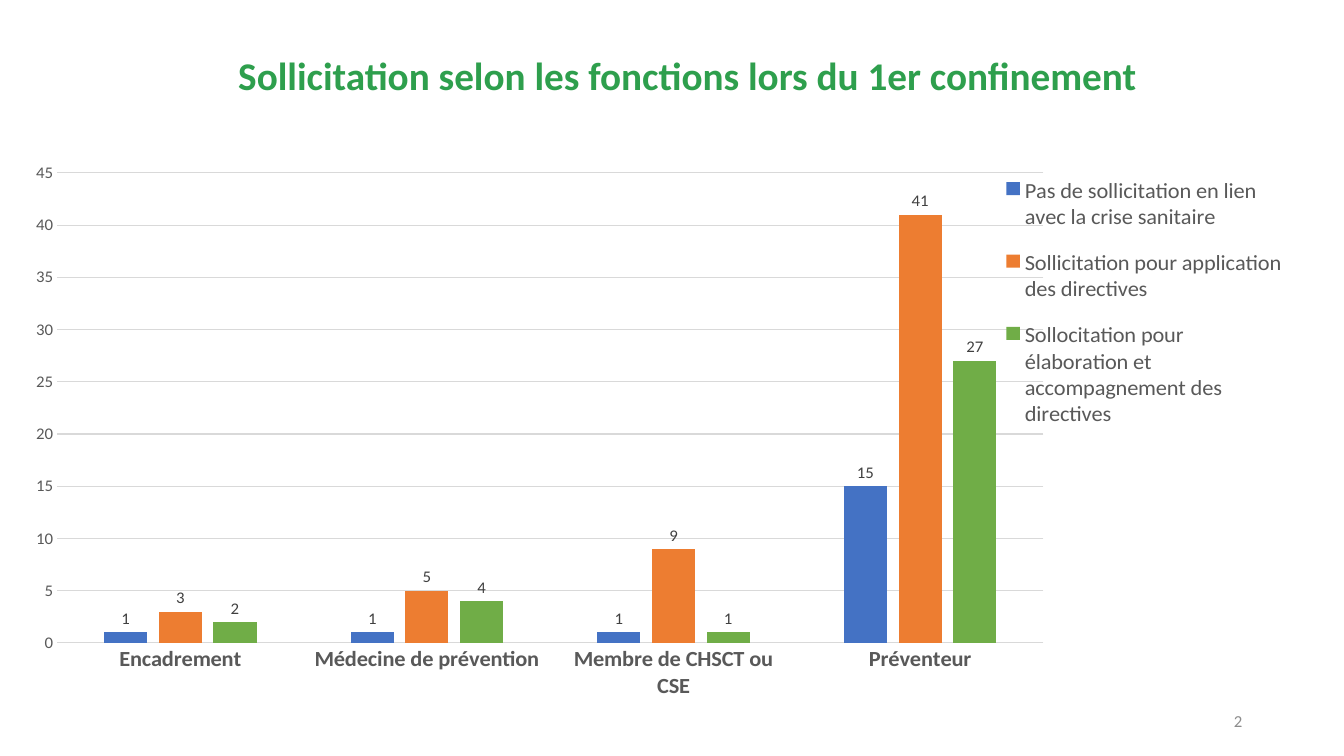
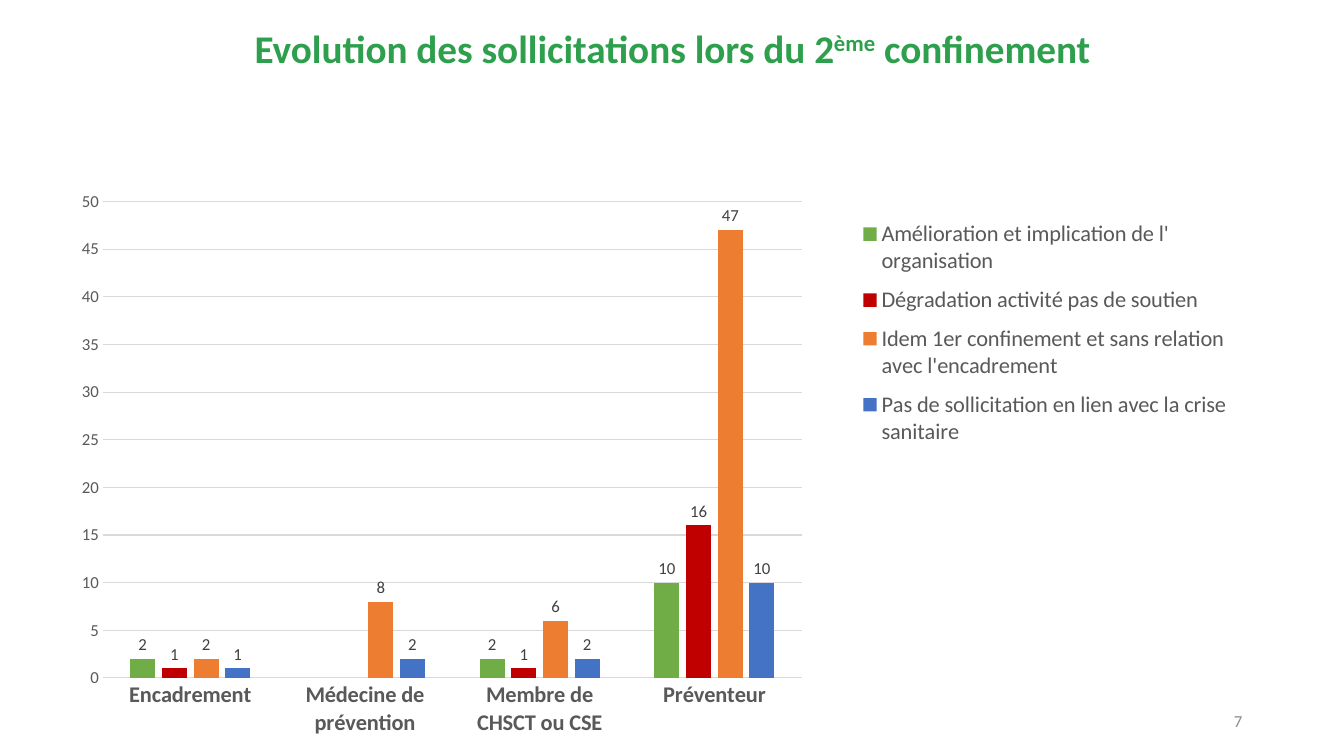
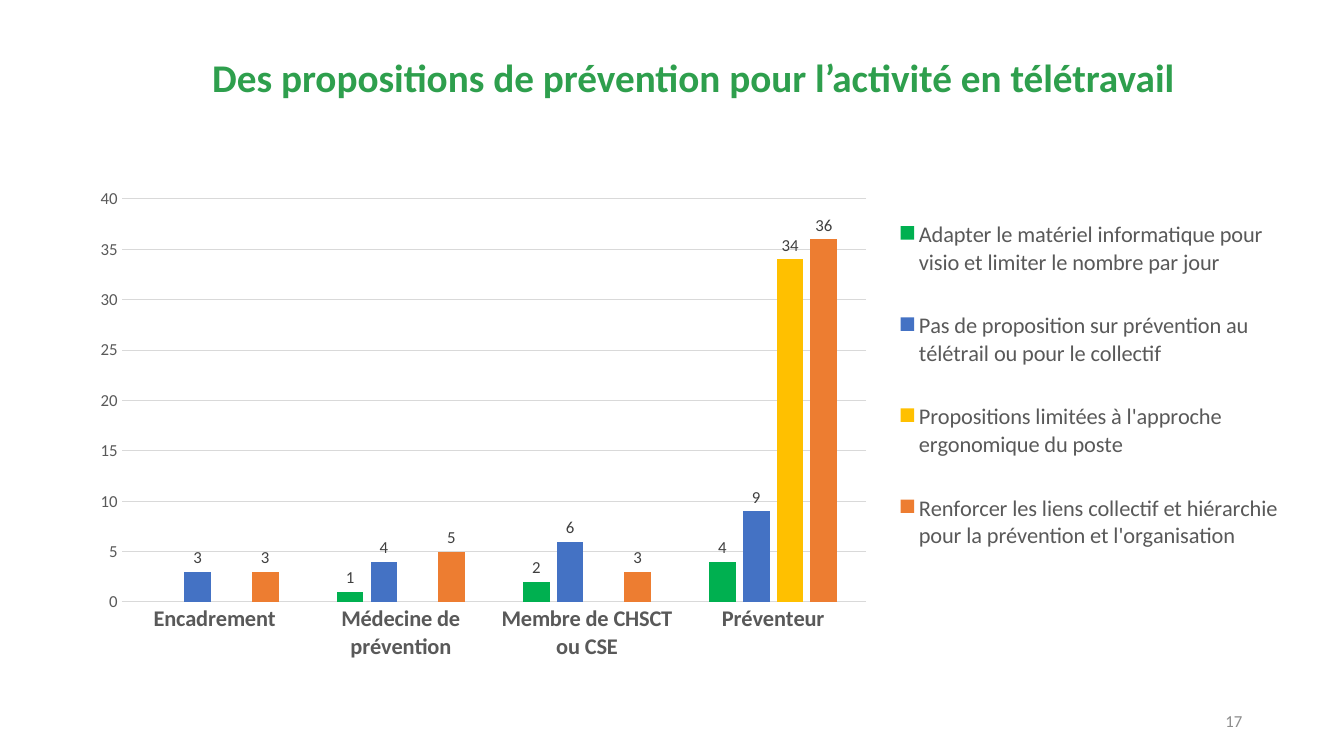
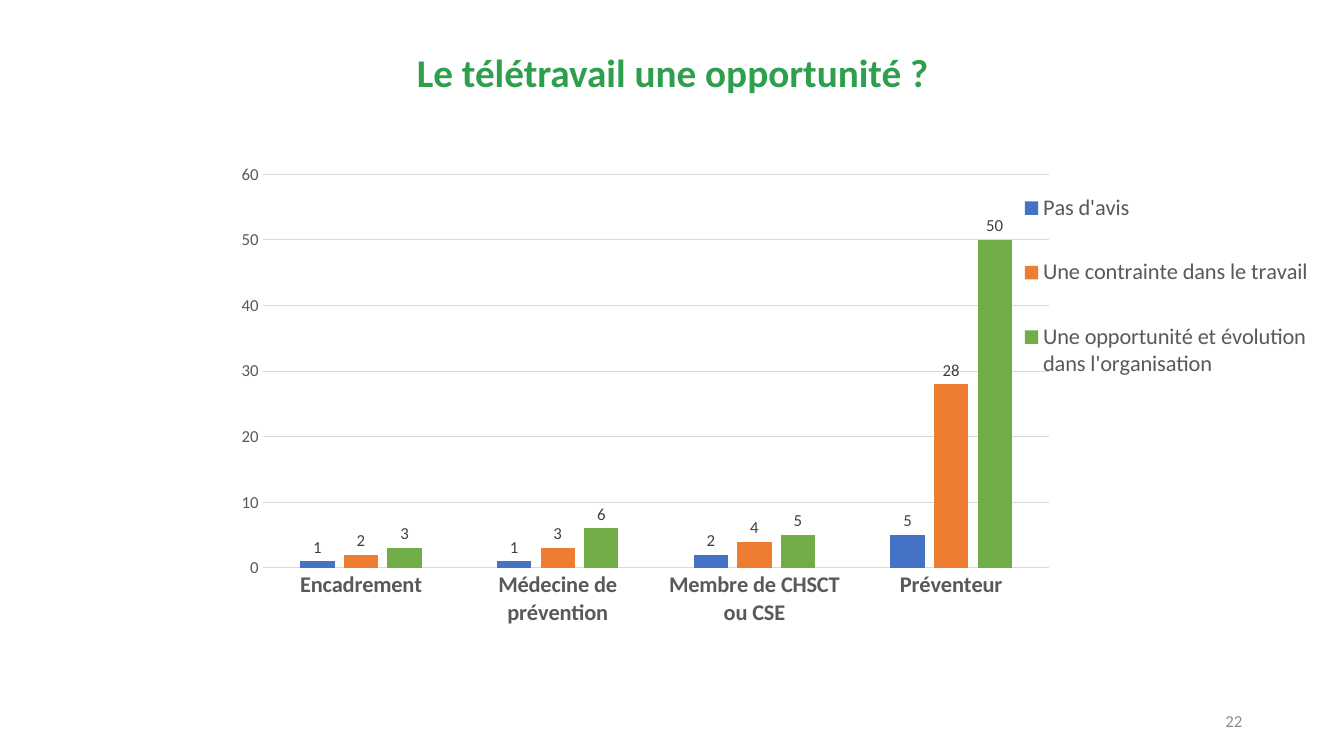
from pptx import Presentation
from pptx.chart.data import CategoryChartData
from pptx.dml.color import RGBColor
from pptx.enum.chart import (XL_CHART_TYPE, XL_LABEL_POSITION,
                             XL_LEGEND_POSITION, XL_TICK_MARK)
from pptx.enum.text import MSO_ANCHOR, MSO_AUTO_SIZE, PP_ALIGN
from pptx.oxml import parse_xml
from pptx.oxml.ns import nsdecls, qn
from pptx.util import Inches, Pt

COLUMN = XL_CHART_TYPE.COLUMN_CLUSTERED
OUTSIDE = XL_LABEL_POSITION.OUTSIDE_END
RIGHT_SIDE = XL_LEGEND_POSITION.RIGHT
NO_TICK = XL_TICK_MARK.NONE
MIDDLE = MSO_ANCHOR.MIDDLE
NO_FIT = MSO_AUTO_SIZE.NONE
CENTER, RIGHT = PP_ALIGN.CENTER, PP_ALIGN.RIGHT

FONT = "Calibri"
TITLE, TEXT, LABEL, GRID, FOOTER = "2E9F4D", "595959", "404040", "D9D9D9", "8C8C8C"
BLUE, ORANGE, GREEN, RED = "4472C4", "ED7D31", "70AD47", "C00000"
EMERALD, GOLD = "00B050", "FFC000"

CATS = ["Encadrement", "Médecine de prévention", "Membre de CHSCT ou CSE", "Préventeur"]

SLIDES = [
    {
        "title": ["Sollicitation selon les fonctions lors du 1er confinement"],
        "head": (1.72, 0.31, 10.19, 0.93),
        "number": "2",
        "chart": (0.16, 1.56, 12.69, 5.38),
        "plot": (0.032, 0.03, 0.771, 0.898),
        "legend": (0.773, 0.002, 0.217, 0.553),
        "scale": (45, 5),
        "series": [
            ("Pas de sollicitation en lien avec la crise sanitaire", BLUE, (1, 1, 1, 15)),
            ("Sollicitation pour application des directives", ORANGE, (3, 5, 9, 41)),
            ("Sollocitation pour élaboration et accompagnement des directives", GREEN,
             (2, 4, 1, 27)),
        ],
    },
    {
        "title": ["Evolution des sollicitations lors du 2", "ème", " confinement"],
        "head": (1.49, 0.2, 10.36, 0.6),
        "number": "7",
        "chart": (0.61, 1.9, 11.73, 5.44),
        "plot": (0.035, 0.016, 0.591, 0.871),
        "legend": (0.676, 0.03, 0.311, 0.453),
        "scale": (50, 5),
        "series": [
            ("Amélioration et implication de l' organisation", GREEN, (2, None, 2, 10)),
            ("Dégradation activité pas de soutien", RED, (1, None, 1, 16)),
            ("Idem 1er confinement et sans relation avec l'encadrement", ORANGE,
             (2, 8, 6, 47)),
            ("Pas de sollicitation en lien avec la crise sanitaire", BLUE, (1, 2, 2, 10)),
        ],
    },
    {
        "title": ["Des propositions de prévention pour l’activité en télétravail"],
        "head": (1.8, 0.35, 10.15, 0.89),
        "number": "17",
        "chart": (0.76, 1.78, 12.05, 4.87),
        "plot": (0.037, 0.04, 0.613, 0.821),
        "legend": (0.678, 0.012, 0.314, 0.817),
        "scale": (40, 5),
        "series": [
            ("Adapter le matériel informatique pour visio et limiter le nombre par jour",
             EMERALD, (None, 1, 2, 4)),
            ("Pas de proposition sur prévention au télétrail ou pour le collectif", BLUE,
             (3, 4, 6, 9)),
            ("Propositions limitées à l'approche ergonomique du poste", GOLD,
             (None, None, None, 34)),
            ("Renforcer les liens collectif et hiérarchie pour la prévention et l'organisation",
             ORANGE, (3, 5, 3, 36)),
        ],
    },
    {
        "title": ["Le télétravail une opportunité ?"],
        "head": (2.32, 0.42, 8.7, 0.65),
        "number": "22",
        "chart": (2.19, 1.56, 10.93, 4.85),
        "plot": (0.038, 0.035, 0.714, 0.805),
        "legend": (0.728, 0, 0.26, 0.528),
        "scale": (60, 10),
        "series": [
            ("Pas d'avis", BLUE, (1, 1, 2, 5)),
            ("Une contrainte dans le travail", ORANGE, (2, 3, 4, 28)),
            ("Une opportunité et évolution dans l'organisation", GREEN, (3, 6, 5, 50)),
        ],
    },
]


def color(code):
    return RGBColor.from_string(code)


def style(font, size, code, bold=False):
    font.name = FONT
    font.size = Pt(size)
    font.bold = bold
    font.color.rgb = color(code)


def rule(line):
    line.color.rgb = color(GRID)
    line.width = Pt(0.75)


def place(node, index, box, inner=False):
    for old in node.findall(qn("c:layout")):
        node.remove(old)
    target = '<c:layoutTarget val="inner"/>' if inner else ""
    modes = "".join(f'<c:{axis}Mode val="edge"/>' for axis in "xy")
    sizes = "".join(f'<c:{key} val="{val}"/>' for key, val in zip("xywh", box))
    node.insert(index, parse_xml(
        f'<c:layout {nsdecls("c")}><c:manualLayout>{target}{modes}{sizes}'
        "</c:manualLayout></c:layout>"))


def add_title(slide, parts, box):
    title = slide.shapes.title
    title.left, title.top, title.width, title.height = map(Inches, box)
    frame = title.text_frame
    frame.auto_size = NO_FIT
    frame.vertical_anchor = MIDDLE
    para = frame.paragraphs[0]
    para.alignment = CENTER
    para.line_spacing = 0.9
    for part in parts:
        run = para.add_run()
        run.text = part
        style(run.font, 28, TITLE, True)
        if part == "ème":
            run.font._element.set("baseline", "30000")


def add_number(slide, text):
    box = slide.shapes.add_textbox(*map(Inches, (9.42, 6.95, 3, 0.4)))
    frame = box.text_frame
    frame.word_wrap = True
    frame.vertical_anchor = MIDDLE
    frame.text = text
    para = frame.paragraphs[0]
    para.alignment = RIGHT
    style(para.runs[0].font, 12, FOOTER)


def add_columns(slide, item):
    data = CategoryChartData()
    data.categories = CATS
    for name, _, vals in item["series"]:
        data.add_series(name, vals)
    chart = slide.shapes.add_chart(COLUMN, *map(Inches, item["chart"]), data).chart
    chart.has_title = False
    style(chart.font, 10, "000000")

    plot = chart.plots[0]
    plot.gap_width, plot.overlap = 219, -27
    plot.vary_by_categories = False
    for series, (_, fill, _) in zip(plot.series, item["series"]):
        series.format.fill.solid()
        series.format.fill.fore_color.rgb = color(fill)
        labels = series.data_labels
        labels.show_value = True
        labels.position = OUTSIDE
        style(labels.font, 12, LABEL)

    cat, val = chart.category_axis, chart.value_axis
    for axis, size in ((cat, 16), (val, 12)):
        axis.major_tick_mark = axis.minor_tick_mark = NO_TICK
        style(axis.tick_labels.font, size, TEXT, axis is cat)
    rule(cat.format.line)
    val.format.line.fill.background()
    rule(val.major_gridlines.format.line)
    val.minimum_scale = 0
    val.maximum_scale, val.major_unit = item["scale"]

    chart.has_legend = True
    legend = chart.legend
    legend.position = RIGHT_SIDE
    legend.include_in_layout = False
    style(legend.font, 16, TEXT)
    place(legend._element, 1, item["legend"])
    place(chart._chartSpace.chart.plotArea, 0, item["plot"], True)


def main():
    deck = Presentation()
    deck.slide_width, deck.slide_height = Inches(13.33), Inches(7.5)
    for item in SLIDES:
        slide = deck.slides.add_slide(deck.slide_layouts[5])
        add_title(slide, item["title"], item["head"])
        add_columns(slide, item)
        add_number(slide, item["number"])
    deck.save("out.pptx")


if __name__ == "__main__":
    main()
